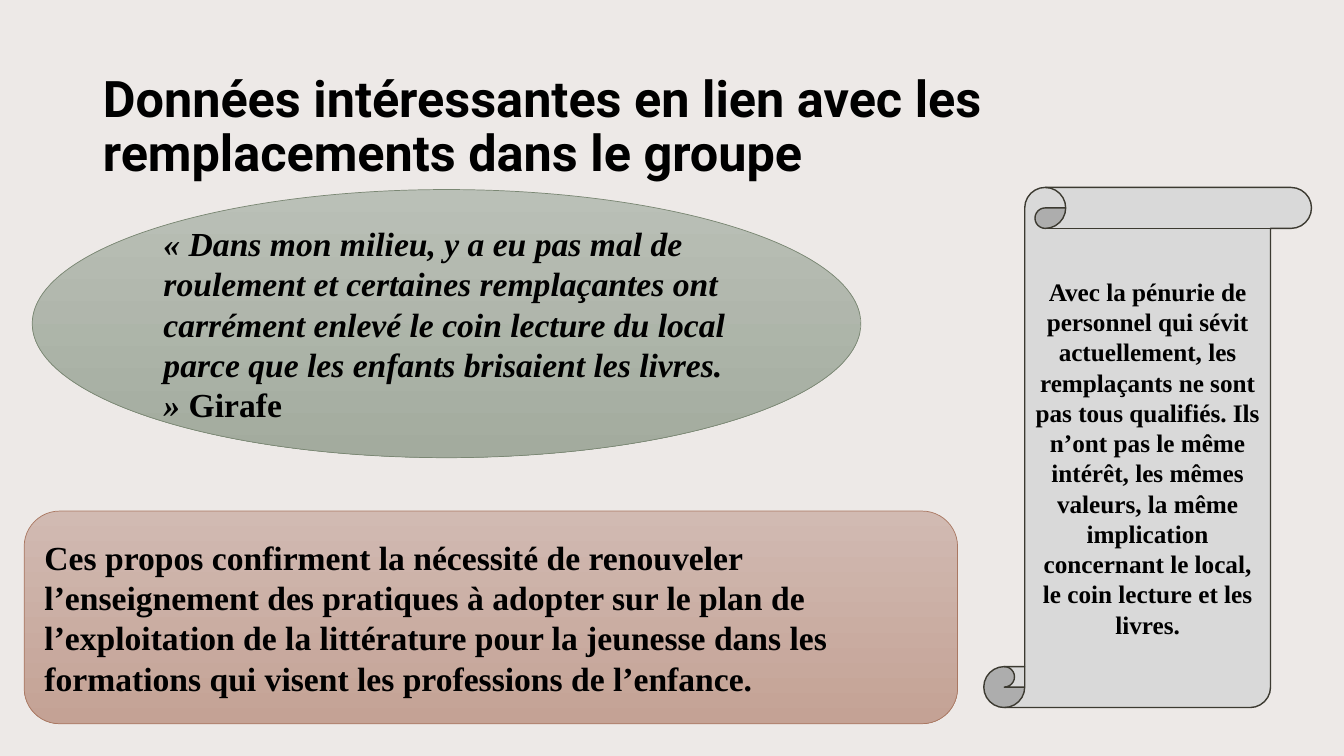
from dataclasses import dataclass

from pptx import Presentation
from pptx.dml.color import RGBColor
from pptx.enum.shapes import MSO_SHAPE as Shape
from pptx.enum.text import MSO_ANCHOR as Anchor, MSO_AUTO_SIZE as AutoSize, PP_ALIGN as Align
from pptx.util import Inches, Pt

prs = Presentation()
prs.slide_width, prs.slide_height = Inches(13.33), Inches(7.5)


@dataclass(frozen=True)
class Box:
    """Left, top, width and height in percent of the slide's size."""
    x: float
    y: float
    w: float
    h: float


@dataclass(frozen=True)
class Run:
    text: str
    italic: bool = False


@dataclass(frozen=True)
class Panel:
    kind: Shape
    box: Box
    fill: tuple[str, ...]
    line: str
    line_width: float
    size: int
    align: Align
    runs: tuple[Run, ...]


def rgb(value: str) -> RGBColor:
    return RGBColor.from_string(value)


def place(box: Box) -> tuple[int, int, int, int]:
    w, h = prs.slide_width / 100, prs.slide_height / 100
    return round(box.x * w), round(box.y * h), round(box.w * w), round(box.h * h)


def write(tf, runs: tuple[Run, ...], font: str, size: int, align: Align, anchor: Anchor) -> None:
    tf.word_wrap = True
    tf.auto_size = AutoSize.NONE
    tf.vertical_anchor = anchor
    p = tf.paragraphs[0]
    p.alignment = align
    for run in runs:
        r = p.add_run()
        r.text = run.text
        r.font.name, r.font.size = font, Pt(size)
        r.font.bold, r.font.italic = True, run.italic
        r.font.color.rgb = rgb("000000")


def paint(fill, colors: tuple[str, ...]) -> None:
    """One colour gives a solid fill, two a gradient from top to bottom."""
    if len(colors) == 1:
        fill.solid()
        fill.fore_color.rgb = rgb(colors[0])
        return
    fill.gradient()
    fill.gradient_angle = 270
    for stop, color in zip(fill.gradient_stops, colors):
        stop.color.rgb = rgb(color)


def draw_panel(s, panel: Panel) -> None:
    sp = s.shapes.add_shape(panel.kind, *place(panel.box))
    sp.shadow.inherit = False
    paint(sp.fill, panel.fill)
    sp.line.color.rgb = rgb(panel.line)
    sp.line.width = Pt(panel.line_width)
    write(sp.text_frame, panel.runs, "Times New Roman", panel.size, panel.align, Anchor.MIDDLE)


TITLE = "Données intéressantes en lien avec les remplacements dans le groupe"
PANELS = (
    Panel(Shape.OVAL, Box(2.4, 25.07, 61.65, 35.47), ("BAC0B7", "A3AB9E"), "7A8773", 0.5, 24, Align.LEFT, (
        Run("« Dans mon milieu, y a eu pas mal de roulement et certaines remplaçantes ont carrément "
            "enlevé le coin lecture du local parce que les enfants brisaient les livres. » ", italic=True),
        Run("Girafe"),
    )),
    Panel(Shape.ROUNDED_RECTANGLE, Box(1.8, 67.6, 69.45, 28.13), ("D1BAB2", "C4A295"), "AA7862", 0.5, 24, Align.LEFT, (
        Run("Ces propos confirment la nécessité de renouveler l’enseignement des pratiques à adopter "
            "sur le plan de l’exploitation de la littérature pour la jeunesse dans les formations "
            "qui visent les professions de l’enfance."),
    )),
    Panel(Shape.VERTICAL_SCROLL, Box(73.2, 24.8, 24.38, 68.8), ("D9D9D9",), "3C3A31", 1, 18, Align.CENTER, (
        Run("Avec la pénurie de personnel qui sévit actuellement, les remplaçants ne sont pas tous "
            "qualifiés. Ils n’ont pas le même intérêt, les mêmes valeurs, la même implication "
            "concernant le local, le coin lecture et les livres."),
    )),
)


def main() -> None:
    s = prs.slides.add_slide(prs.slide_layouts.get_by_name("Title Only"))
    paint(s.background.fill, ("EDE9E7",))
    title = s.shapes.title
    title.left, title.top, title.width, title.height = place(Box(6.9, 8.53, 86.25, 16.27))
    write(title.text_frame, (Run(TITLE),), "Roboto", 36, Align.LEFT, Anchor.BOTTOM)
    title.text_frame.paragraphs[0].line_spacing = 0.9
    for panel in PANELS:
        draw_panel(s, panel)
    prs.save("out.pptx")


if __name__ == "__main__":
    main()
